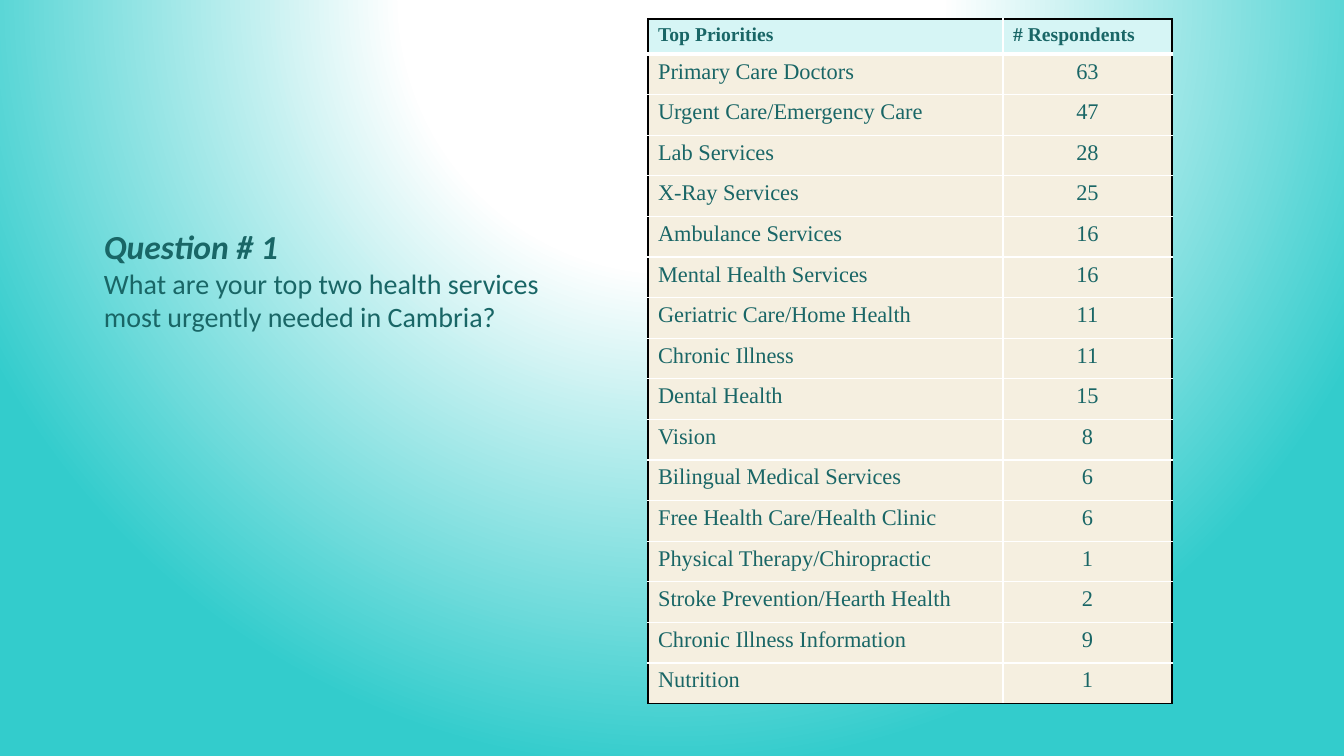
import lxml.etree
import pptx
import pptx.dml.color
import pptx.enum.text
import pptx.oxml.ns
import pptx.util

PX_PER_INCH = 100.8
COLORS = {
    "text": "196666",
    "header": "D6F5F5",
    "body": "F5EFE0",
    "frame": "000000",
    "grid": "FFFFFF",
    "glow": "FFFFFF",
    "edge": "33CCCC",
}
HEADINGS = ("Top Priorities", "# Respondents")
PRIORITIES = [
    ("Primary Care Doctors", 63),
    ("Urgent Care/Emergency Care", 47),
    ("Lab Services", 28),
    ("X-Ray Services", 25),
    ("Ambulance Services", 16),
    ("Mental Health Services", 16),
    ("Geriatric Care/Home Health", 11),
    ("Chronic Illness", 11),
    ("Dental Health", 15),
    ("Vision", 8),
    ("Bilingual Medical Services", 6),
    ("Free Health Care/Health Clinic", 6),
    ("Physical Therapy/Chiropractic", 1),
    ("Stroke Prevention/Hearth Health", 2),
    ("Chronic Illness Information", 9),
    ("Nutrition", 1),
]


def px(length):
    return pptx.util.Emu(round(length * 914400 / PX_PER_INCH))


def rgb(name):
    return pptx.dml.color.RGBColor.from_string(COLORS[name])


def add_child(parent, tag, **attributes):
    return lxml.etree.SubElement(parent, pptx.oxml.ns.qn(tag), attributes)


def set_font(paragraph, family, size, bold=False, italic=False):
    font = paragraph.font
    font.name = family
    font.size = pptx.util.Pt(size)
    font.bold = bold
    font.italic = italic
    font.color.rgb = rgb("text")


def paint_background(slide):
    """Radial glow centred above the slide's top edge."""
    slide.background.fill.gradient()
    gradient = slide.element.find(".//" + pptx.oxml.ns.qn("a:gradFill"))
    for child in list(gradient):
        gradient.remove(child)
    stops = add_child(gradient, "a:gsLst")
    for percent, color in ((0, "glow"), (35, "glow"), (100, "edge")):
        stop = add_child(stops, "a:gs", pos=str(percent * 1000))
        add_child(stop, "a:srgbClr", val=COLORS[color])
    path = add_child(gradient, "a:path", path="circle")
    add_child(path, "a:fillToRect", l="50000", t="-80000", r="50000", b="180000")


def add_question(slide, left, top, width, height):
    box = slide.shapes.add_textbox(px(left), px(top), px(width), px(height))
    frame = box.text_frame
    frame.word_wrap = True
    frame.auto_size = pptx.enum.text.MSO_AUTO_SIZE.SHAPE_TO_FIT_TEXT
    title = frame.paragraphs[0]
    title.text = "Question # 1"
    set_font(title, "Calibri", 24, bold=True, italic=True)
    question = frame.add_paragraph()
    question.text = "What are your top two health services most urgently needed in Cambria?"
    set_font(question, "Calibri", 20)


def add_border(cell, side, color, points):
    line = add_child(cell._tc.get_or_add_tcPr(), "a:ln" + side, w=str(points * 12700))
    fill = add_child(line, "a:solidFill")
    add_child(fill, "a:srgbClr", val=COLORS[color])


def add_priorities(slide, left, top, width, height, header_height=35, count_width=169):
    rows = [HEADINGS] + PRIORITIES
    last = len(rows) - 1
    table = slide.shapes.add_table(
        len(rows), 2, px(left), px(top), px(width), px(height)).table
    table.horz_banding = False
    table.columns[0].width = px(width - count_width)
    table.columns[1].width = px(count_width)
    for r, values in enumerate(rows):
        is_header = r == 0
        table.rows[r].height = px(
            header_height if is_header else (height - header_height) / last)
        for c, value in enumerate(values):
            cell = table.cell(r, c)
            add_border(cell, "L", "frame" if c == 0 else "grid", 1)
            add_border(cell, "R", "frame" if c == 1 else "grid", 1)
            add_border(cell, "T", "frame" if is_header else "grid", 3 if r == 1 else 1)
            add_border(cell, "B", "frame" if r == last else "grid", 3 if is_header else 1)
            cell.fill.solid()
            cell.fill.fore_color.rgb = rgb("header" if is_header else "body")
            paragraph = cell.text_frame.paragraphs[0]
            paragraph.text = str(value)
            set_font(paragraph, "Times New Roman", 14 if is_header else 16, bold=is_header)
            if c == 1 and not is_header:
                paragraph.alignment = pptx.enum.text.PP_ALIGN.CENTER


def main():
    deck = pptx.Presentation()
    deck.slide_width = px(1344)
    deck.slide_height = px(756)
    slide = deck.slides.add_slide(deck.slide_layouts[6])
    paint_background(slide)
    add_question(slide, 94, 221, 508, 119)
    add_priorities(slide, 648, 19, 524, 685)
    deck.save("out.pptx")


if __name__ == "__main__":
    main()
